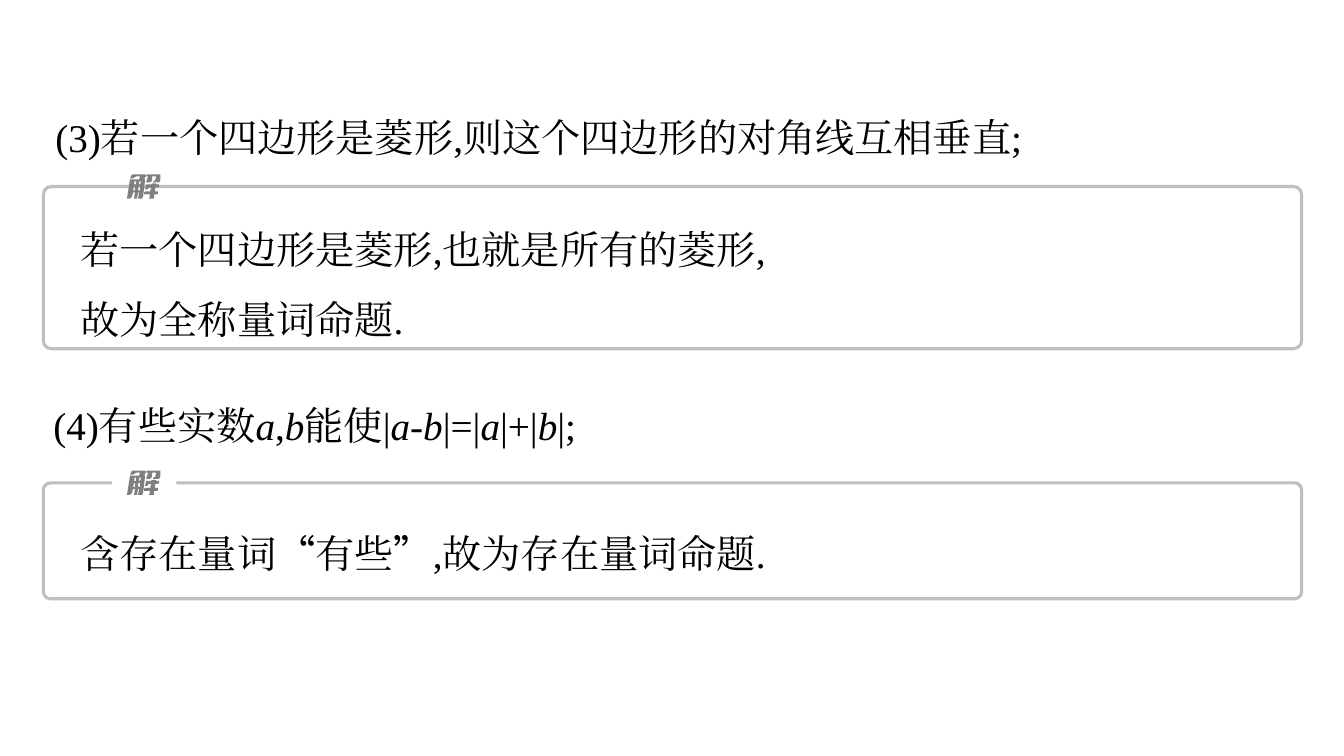
import pptx
import pptx.dml.color
import pptx.enum.shapes
import pptx.enum.text
import pptx.oxml.ns
import pptx.util
from lxml import etree

PX = 9144  # EMU per px, 100 px to the inch
SERIF, SANS = "Times New Roman", "Noto Sans CJK SC"

# Contours of the character 解, in px from its top left corner
SOLUTION_GLYPH = [
    [(11, 12), (11, 16), (13, 16), (13, 12)],
    [(7, 12), (6, 16), (8, 16), (8, 12)],
    [(25, 9), (29, 9), (29, 10), (32, 10), (32, 12), (31, 13), (28, 13),
     (28, 17), (31, 17), (31, 19), (30, 20), (27, 20), (27, 24), (22, 24),
     (23, 20), (17, 20), (17, 18), (18, 17), (23, 17), (24, 13), (22, 13),
     (20, 15), (18, 15), (19, 10), (24, 10)],
    [(12, 7), (12, 10), (13, 10), (14, 7)],
    [(20, 0), (33, 0), (33, 6), (32, 8), (26, 8), (26, 7), (28, 6), (29, 2),
     (25, 2), (25, 6), (23, 8), (19, 8), (21, 2), (19, 2)],
    [(5, 0), (18, 0), (19, 1), (17, 5), (18, 5), (16, 22), (15, 24), (11, 24),
     (12, 18), (11, 18), (10, 24), (7, 24), (8, 18), (6, 18), (5, 22), (3, 24),
     (0, 24), (3, 5), (8, 5), (7, 10), (9, 10), (9, 7), (8, 7), (8, 5),
     (12, 5), (13, 2), (9, 2), (6, 4), (3, 4)],
]


def color(hex_string):
    return pptx.dml.color.RGBColor.from_string(hex_string)


def emu(*lengths):
    return [pptx.util.Emu(n * PX) for n in lengths]


def paint(sp, fill=None, line=None):
    sp.shadow.inherit = False
    if fill:
        sp.fill.solid()
        sp.fill.fore_color.rgb = color(fill)
    else:
        sp.fill.background()
    if line:
        sp.line.color.rgb = color(line)
        sp.line.width = pptx.util.Pt(2.25)
    else:
        sp.line.fill.background()


def add_text(s, box, paragraphs):
    """Write paragraphs, each a list of (text, italic, font) runs."""
    tf = s.shapes.add_textbox(*emu(*box)).text_frame
    tf.word_wrap = True
    tf.auto_size = pptx.enum.text.MSO_AUTO_SIZE.SHAPE_TO_FIT_TEXT
    for i, runs in enumerate(paragraphs):
        p = tf.paragraphs[0] if i == 0 else tf.add_paragraph()
        p.line_spacing = 1.5
        for text, italic, font in runs:
            r = p.add_run()
            r.text = text
            r.font.size = pptx.util.Pt(28)
            r.font.name = font
            r.font.italic = italic
            r.font.color.rgb = color("000000")
            ea = etree.SubElement(r.font._element, pptx.oxml.ns.qn("a:ea"))
            ea.set("typeface", font)


def plain(text):
    return (text, False, SERIF)


def math_runs(text):
    """Split text into runs, with the variables a and b in italics."""
    for name in "ab":
        text = text.replace(name, f"\t{name}\t")
    return [(part, part in ("a", "b"), SERIF) for part in text.split("\t") if part]


def add_glyph(s, x, y):
    builder = None
    for contour in SOLUTION_GLYPH:
        points = [(x + dx, y + dy) for dx, dy in contour]
        if builder is None:
            builder = s.shapes.build_freeform(*points[0], scale=PX)
        else:
            builder.move_to(*points[0])
        builder.add_line_segments(points[1:], close=True)
    paint(builder.convert_to_shape(), fill="808080")


def add_solution(s, box, radius, text_box, paragraphs, gap):
    """Draw a framed answer; gap opens the frame behind its label."""
    x, y = box[:2]
    shapes = pptx.enum.shapes.MSO_SHAPE
    frame = s.shapes.add_shape(shapes.ROUNDED_RECTANGLE, *emu(*box))
    frame.adjustments[0] = radius
    paint(frame, line="BFBFBF")
    if gap:
        paint(s.shapes.add_shape(shapes.RECTANGLE, *emu(x + 68, y - 13, 64, 24)),
              fill="FFFFFF")
    add_glyph(s, x + 83, y - 12)
    add_text(s, text_box, paragraphs)


def main():
    prs = pptx.Presentation()
    prs.slide_width, prs.slide_height = emu(1333, 750)
    s = prs.slides.add_slide(prs.slide_layouts[6])

    add_text(s, (45, 84, 1240, 73),
             [[plain("(3)若一个四边形是菱形,则这个四边形的对角线互相垂直;")]])
    add_solution(s, (43, 185, 1248, 161), 0.05, (70, 195, 1193, 144),
                 [[plain("若一个四边形是菱形,也就是所有的菱形,")],
                  [plain("故为全称量词命题.")]], gap=False)

    add_text(s, (43, 370, 1248, 73), [math_runs("(4)有些实数a,b能使|a-b|=|a|+|b|;")])
    add_solution(s, (43, 479, 1248, 115), 0.06, (70, 497, 1193, 73),
                 [[plain("含存在量词"), ("“", False, SANS), plain("有些"),
                   ("”", False, SANS), plain(",故为存在量词命题.")]], gap=True)

    prs.save("out.pptx")


if __name__ == "__main__":
    main()
